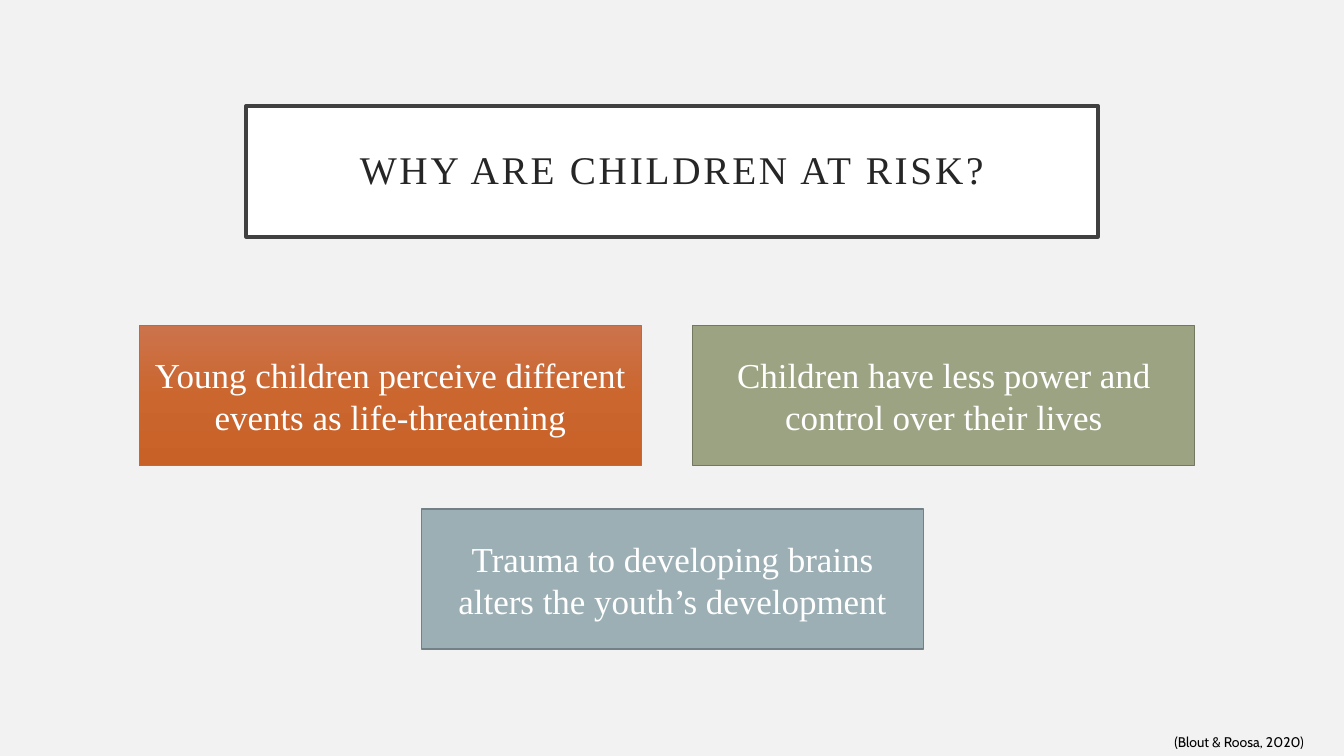
from copy import deepcopy

from pptx import Presentation
from pptx.dml.color import RGBColor
from pptx.enum.shapes import MSO_SHAPE
from pptx.enum.text import MSO_ANCHOR, MSO_AUTO_SIZE, PP_ALIGN
from pptx.oxml.ns import qn
from pptx.util import Inches, Pt

SLIDE_WIDTH, SLIDE_HEIGHT = 13.33, 7.5
SERIF, SANS = "Times New Roman", "Cabin"
COLORS = {
    "background": "F2F2F2",
    "title_fill": "FFFFFF",
    "title_line": "404040",
    "title_text": "262626",
    "card_text": "FFFFFF",
    "citation": "000000",
    "orange_top": "CC734B",
    "orange_middle": "CB662F",
    "orange_bottom": "C86128",
    "orange_line": "C96731",
    "green": "9CA383",
    "green_line": "737961",
    "blue": "9BAFB5",
    "blue_line": "738186",
}
ORANGE_GRADIENT = ("orange_top", "orange_middle", "orange_bottom")

CARD_WIDTH, CARD_HEIGHT = 4.98, 1.39
COLUMN_STEP, ROW_STEP = 5.49, 1.82
# Text, column, row, fill colours, line colour, line width
CARDS = [
    ("Young children perceive different events as life-threatening",
     0, 0, ORANGE_GRADIENT, "orange_line", 0.5),
    ("Children have less power and control over their lives",
     1, 0, ("green",), "green_line", 1),
    ("Trauma to developing brains alters the youth’s development",
     0.51, 1, ("blue",), "blue_line", 1),
]


def color(name):
    return RGBColor.from_string(COLORS[name])


def fill_shape(shape, names):
    """Fill with one colour, or with an even gradient from top to bottom."""
    if len(names) == 1:
        shape.fill.solid()
        shape.fill.fore_color.rgb = color(names[0])
        return
    shape.fill.gradient()
    shape.fill.gradient_angle = 270
    stop_list = shape.element.spPr.find(".//" + qn("a:gsLst"))
    while len(stop_list) < len(names):
        stop_list.append(deepcopy(stop_list[0]))
    for index, (stop, name) in enumerate(zip(shape.fill.gradient_stops, names)):
        stop.position = index / (len(names) - 1)
        stop.color.rgb = color(name)


def write_text(shape, text, font_name, size, color_name):
    paragraph = shape.text_frame.paragraphs[0]
    paragraph.text = text
    paragraph.font.name = font_name
    paragraph.font.size = Pt(size)
    paragraph.font.color.rgb = color(color_name)
    return paragraph


def add_panel(slide, box, fill_names, line_name, line_width):
    panel = slide.shapes.add_shape(MSO_SHAPE.RECTANGLE, *map(Inches, box))
    panel.shadow.inherit = False
    fill_shape(panel, fill_names)
    panel.line.color.rgb = color(line_name)
    panel.line.width = Pt(line_width)
    panel.text_frame.word_wrap = True
    panel.text_frame.vertical_anchor = MSO_ANCHOR.MIDDLE
    return panel


def add_title(slide, box):
    panel = add_panel(slide, box, ("title_fill",), "title_line", 2.5)
    frame = panel.text_frame
    frame.margin_left = frame.margin_right = Inches(0.2)
    frame.margin_top = frame.margin_bottom = Inches(0.2)
    paragraph = write_text(panel, "WHY ARE CHILDREN AT RISK?", SERIF, 28, "title_text")
    paragraph.alignment = PP_ALIGN.CENTER
    paragraph.line_spacing = 0.9
    paragraph.runs[0].font._element.set("spc", "200")


def add_cards(slide, left, top):
    for text, column, row, fill_names, line_name, line_width in CARDS:
        box = (left + column * COLUMN_STEP, top + row * ROW_STEP, CARD_WIDTH, CARD_HEIGHT)
        card = add_panel(slide, box, fill_names, line_name, line_width)
        paragraph = write_text(card, text, SERIF, 25, "card_text")
        paragraph.alignment = PP_ALIGN.CENTER


def add_citation(slide, box):
    citation = slide.shapes.add_textbox(*map(Inches, box))
    citation.text_frame.word_wrap = False
    citation.text_frame.auto_size = MSO_AUTO_SIZE.SHAPE_TO_FIT_TEXT
    write_text(citation, "(Blout & Roosa, 2020)", SANS, 10, "citation")


def main():
    presentation = Presentation()
    presentation.slide_width = Inches(SLIDE_WIDTH)
    presentation.slide_height = Inches(SLIDE_HEIGHT)
    slide = presentation.slides.add_slide(presentation.slide_layouts[6])
    slide.background.fill.solid()
    slide.background.fill.fore_color.rgb = color("background")
    add_title(slide, (2.44, 1.05, 8.45, 1.3))
    add_cards(slide, 1.38, 3.23)
    add_citation(slide, (11.55, 7.23, 1.63, 0.27))
    presentation.save("out.pptx")


if __name__ == "__main__":
    main()
